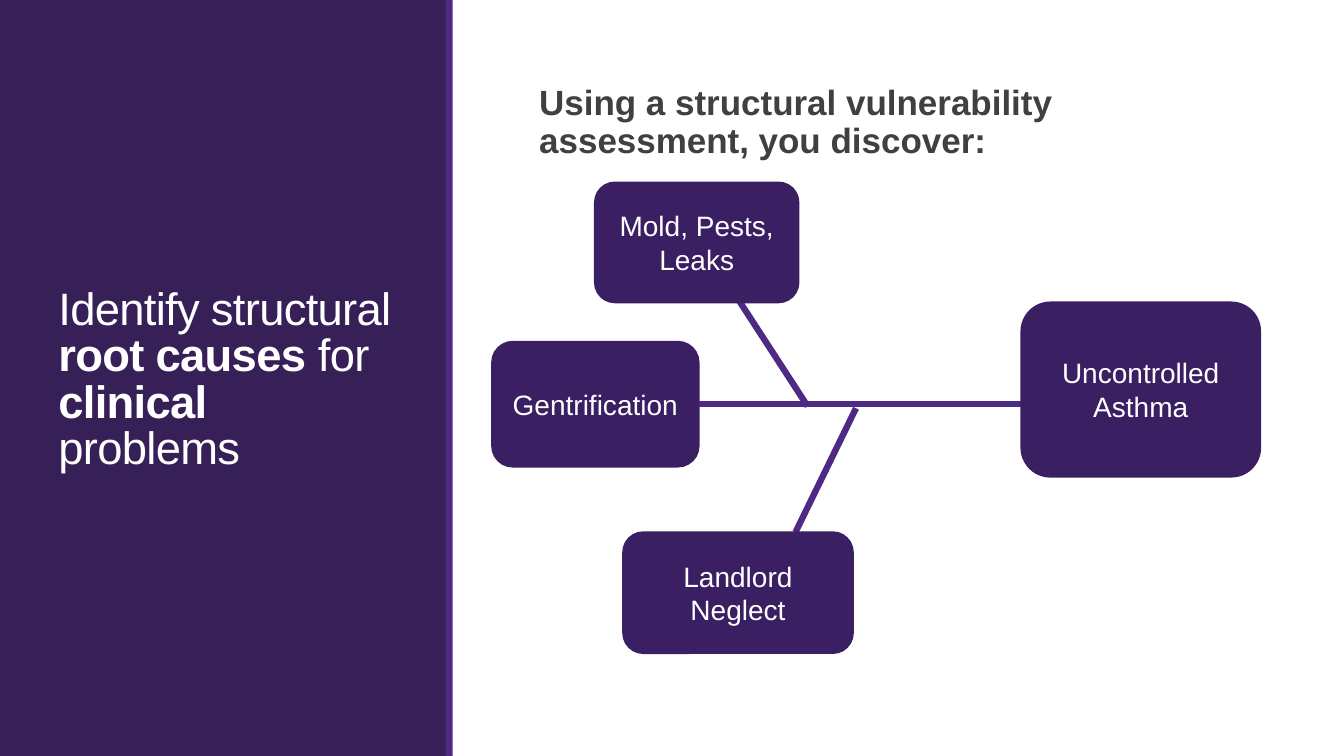
from dataclasses import dataclass

from lxml.etree import SubElement
from pptx import Presentation
from pptx.dml.color import RGBColor
from pptx.enum.shapes import MSO_CONNECTOR as Connector, MSO_SHAPE as Shape
from pptx.enum.text import MSO_ANCHOR as Anchor, MSO_AUTO_SIZE as AutoSize, PP_ALIGN as Align
from pptx.oxml.ns import qn
from pptx.util import Inches, Pt

TITLE = [[("Identify structural ", False), ("root causes ", True), ("for ", False),
          ("clinical", True), (" problems", False)]]
HEADING = [[("Using a structural vulnerability assessment, you discover:", True)]]

# Each box: lines of text, then left, top, width, height
ROOT_CAUSE = (["Gentrification"], (4.88, 3.39, 2.05, 1.24))
PROBLEM = (["Uncontrolled Asthma"], (10.13, 3, 2.37, 1.73))
# Each contributing cause: box, then the start and end of its branch
CAUSES = [
    ((["Mold, Pests, Leaks"], (5.9, 1.81, 2.02, 1.19)), (7.27, 2.89), (8.01, 4.03)),
    ((["Landlord", "Neglect"], (6.18, 5.28, 2.28, 1.2)), (7.89, 5.28), (8.49, 4.05)),
]
SPINE_END = 11.86


@dataclass(frozen=True)
class Theme:
    font: str = "Arial"
    panel: str = "372058"
    accent: str = "4E2A84"
    box: str = "3A1F63"
    box_edge: str = "3A1F62"
    light: str = "FFFFFF"
    dark: str = "404040"
    title_size: float = 32.4
    heading_size: float = 25
    box_size: float = 20
    branch_width: float = 4.5
    edge_width: float = 1.25


THEME = Theme()


def rgb(value):
    return RGBColor.from_string(value)


def write(frame, paragraphs, *, size, color, align=Align.LEFT, anchor=Anchor.TOP,
          line_spacing=None, tracking=None):
    """Fill a frame with paragraphs of (text, bold) runs; tracking is in points."""
    frame.word_wrap = True
    frame.auto_size = AutoSize.NONE
    frame.vertical_anchor = anchor
    for index, runs in enumerate(paragraphs):
        paragraph = frame.add_paragraph() if index else frame.paragraphs[0]
        paragraph.alignment = align
        paragraph.line_spacing = line_spacing
        for words, bold in runs:
            run = paragraph.add_run()
            run.text = words
            run.font.name = THEME.font
            run.font.size = Pt(size)
            run.font.bold = bold
            run.font.color.rgb = rgb(color)
            if tracking is not None:
                run.font._element.set("spc", str(round(tracking * 100)))


def add_block(slide, preset, place, fill, edge=None):
    block = slide.shapes.add_shape(preset, *map(Inches, place))
    block.shadow.inherit = False
    block.fill.solid()
    block.fill.fore_color.rgb = rgb(fill)
    if edge:
        block.line.color.rgb = rgb(edge)
        block.line.width = Pt(THEME.edge_width)
    else:
        block.line.fill.background()
    return block


def add_box(slide, lines, place):
    box = add_block(slide, Shape.ROUNDED_RECTANGLE, place, THEME.box, THEME.box_edge)
    write(box.text_frame, [[(line, False)] for line in lines], size=THEME.box_size,
          color=THEME.light, align=Align.CENTER, anchor=Anchor.MIDDLE)
    return box


def add_branch(slide, start, end):
    branch = slide.shapes.add_connector(Connector.STRAIGHT, *map(Inches, (*start, *end)))
    branch.line.color.rgb = rgb(THEME.accent)
    branch.line.width = Pt(THEME.branch_width)
    SubElement(branch._element.spPr, qn("a:effectLst"))
    return branch


def add_title_panel(slide):
    title = slide.shapes.title
    for place, fill in (((0, 0, 4.43, 7.5), THEME.panel), ((4.42, 0, 0.07, 7.5), THEME.accent)):
        panel = add_block(slide, Shape.RECTANGLE, place, fill)
        title.element.addprevious(panel.element)
    title.left, title.top, title.width, title.height = map(Inches, (0.48, 2.25, 3.5, 2.5))
    write(title.text_frame, TITLE, size=THEME.title_size, color=THEME.light,
          anchor=Anchor.BOTTOM, line_spacing=0.85, tracking=-0.5)


def add_heading(slide):
    heading = slide.shapes.add_textbox(*map(Inches, (5.25, 0.8, 7.1, 5.75)))
    heading.text_frame.margin_left = Inches(0.1)
    heading.text_frame.margin_right = 0
    write(heading.text_frame, HEADING, size=THEME.heading_size, color=THEME.dark,
          line_spacing=0.9)


def add_fishbone(slide):
    root = add_box(slide, *ROOT_CAUSE)
    left, top, width, height = ROOT_CAUSE[1]
    middle = top + height / 2
    spine = add_branch(slide, (left + width, middle), (SPINE_END, middle))
    spine.begin_connect(root, 3)
    for box, start, end in CAUSES:
        add_branch(slide, start, end)
        add_box(slide, *box)
    add_box(slide, *PROBLEM)


def main():
    deck = Presentation()
    deck.slide_width, deck.slide_height = Inches(13.33), Inches(7.5)
    slide = deck.slides.add_slide(deck.slide_layouts[5])
    add_title_panel(slide)
    add_heading(slide)
    add_fishbone(slide)
    deck.save("out.pptx")


if __name__ == "__main__":
    main()
